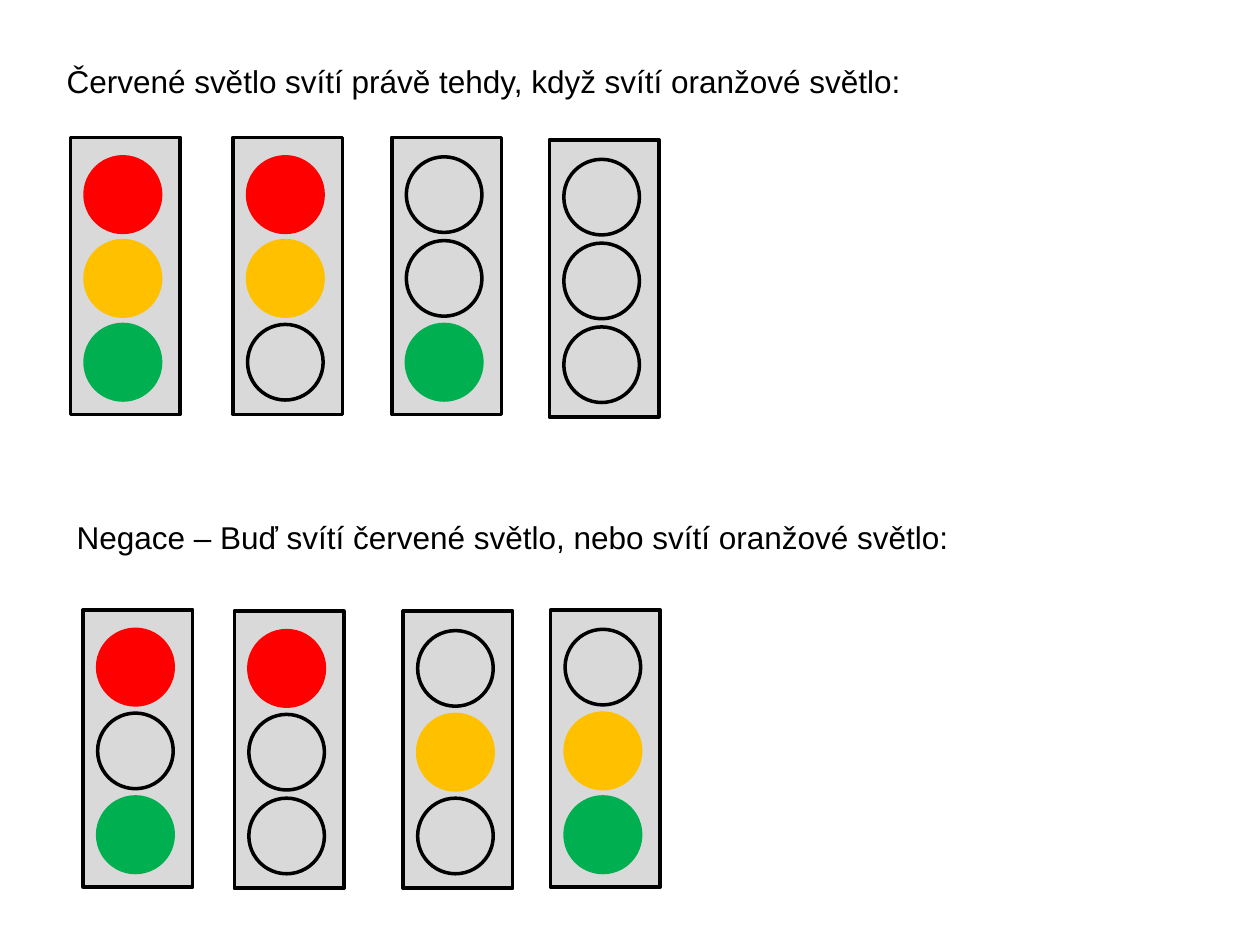
from pptx import Presentation
from pptx.dml import color
from pptx.enum import shapes, text
from pptx.util import Inches, Pt

BLACK, HOUSING = "000000", "D9D9D9"
RED, ORANGE, GREEN = "FF0000", "FFC000", "00B050"
OFF = None


def rgb(hex_code):
    return color.RGBColor.from_string(hex_code)


class SlideBuilder:
    font_name, font_size = "Arial", 18
    line_width = 2
    housing_width, housing_height = 0.87, 2.2
    lamp_size, lamp_pitch = 0.6, 0.665
    lamp_left, lamp_top = 0.115, 0.155

    def __init__(self, slide):
        self.slide = slide

    def caption(self, wording, left, top, width):
        box = self.slide.shapes.add_textbox(
            Inches(left), Inches(top), Inches(width), Inches(0.4))
        frame = box.text_frame
        frame.word_wrap = False
        frame.auto_size = text.MSO_AUTO_SIZE.SHAPE_TO_FIT_TEXT
        frame.text = wording
        font = frame.paragraphs[0].runs[0].font
        font.name, font.size = self.font_name, Pt(self.font_size)
        font.color.rgb = rgb(BLACK)

    def outlined(self, group, preset, left, top, width, height, fill, line):
        shape = group.shapes.add_shape(
            preset, Inches(left), Inches(top), Inches(width), Inches(height))
        shape.shadow.inherit = False
        if fill:
            shape.fill.solid()
            shape.fill.fore_color.rgb = rgb(fill)
        else:
            shape.fill.background()
        shape.line.color.rgb = rgb(line)
        shape.line.width = Pt(self.line_width)

    def traffic_light(self, left, top, lamps):
        group = self.slide.shapes.add_group_shape()
        self.outlined(group, shapes.MSO_SHAPE.RECTANGLE, left, top,
                      self.housing_width, self.housing_height, HOUSING, BLACK)
        for position, lamp in enumerate(lamps):
            lamp_top = top + self.lamp_top + position * self.lamp_pitch
            self.outlined(group, shapes.MSO_SHAPE.OVAL,
                          left + self.lamp_left, lamp_top,
                          self.lamp_size, self.lamp_size, lamp, lamp or BLACK)


def main():
    deck = Presentation()
    deck.slide_width, deck.slide_height = Inches(10), Inches(7.5)
    builder = SlideBuilder(deck.slides.add_slide(deck.slide_layouts[6]))

    # Equivalence: red and orange are both on or both off
    builder.caption("Červené světlo svítí právě tehdy, když svítí oranžové světlo:",
                    0.43, 0.44, 6.89)
    equivalence = [
        (0.56, 1.09, (RED, ORANGE, GREEN)),
        (1.85, 1.09, (RED, ORANGE, OFF)),
        (3.11, 1.09, (OFF, OFF, GREEN)),
        (4.36, 1.11, (OFF, OFF, OFF)),
    ]

    # Negation: exactly one of red and orange is on
    builder.caption("Negace – Buď svítí červené světlo, nebo svítí oranžové světlo:",
                    0.51, 4.06, 7.19)
    negation = [
        (0.66, 4.84, (RED, OFF, GREEN)),
        (1.86, 4.85, (RED, OFF, OFF)),
        (3.2, 4.85, (OFF, ORANGE, OFF)),
        (4.37, 4.84, (OFF, ORANGE, GREEN)),
    ]

    # Traffic lights of both rows
    for left, top, lamps in equivalence + negation:
        builder.traffic_light(left, top, lamps)

    deck.save("out.pptx")


if __name__ == "__main__":
    main()
